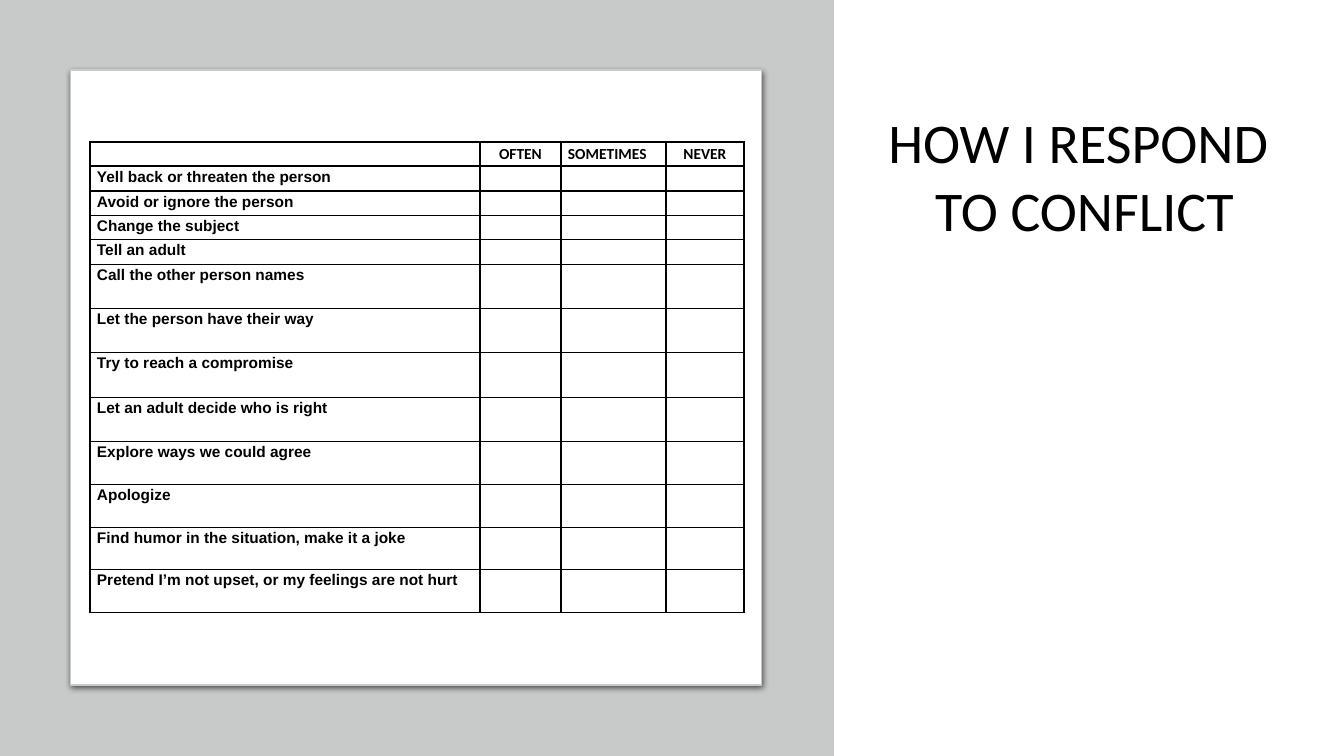
import itertools

import pptx
import pptx.dml.color
import pptx.enum.shapes
import pptx.enum.text
import pptx.oxml
import pptx.oxml.ns
import pptx.util
from lxml import etree

TITLE = ["HOW I RESPOND ", "TO CONFLICT"]
FREQUENCIES = ["OFTEN", "SOMETIMES", "NEVER"]
RESPONSES = [
    "Yell back or threaten the person",
    "Avoid or ignore the person",
    "Change the subject",
    "Tell an adult",
    "Call the other person names",
    "Let the person have their way",
    "Try to reach a compromise",
    "Let an adult decide who is right",
    "Explore ways we could agree",
    "Apologize",
    "Find humor in the situation, make it a joke",
    "Pretend I’m not upset, or my feelings are not hurt",
]
COLORS = {"backdrop": "C8CACA", "card": "FFFFFF", "ink": "000000"}

SLIDE = (1344, 756)
BACKDROP = (0, 0, 834, 756)
CARD = (71, 70, 691, 615)
TITLE_BOX = (876, 103, 417, 146)
COLUMN_EDGES = [90, 480, 561, 666, 744]
ROW_EDGES = [142, 166, 191, 216, 240, 265, 309, 353, 398, 442, 485, 528, 570, 613]
CELL_FORMAT = {"margin_left": 7, "margin_top": 1, "margin_right": 7, "margin_bottom": 0}
CELL_PT = 11
CENTER = pptx.enum.text.PP_ALIGN.CENTER
LEFT = pptx.enum.text.PP_ALIGN.LEFT
SHADOW = (
    f'<a:effectLst {pptx.oxml.ns.nsdecls("a")}>'
    '<a:outerShdw blurRad="57150" dist="19050" dir="5400000" algn="ctr" rotWithShape="0">'
    f'<a:srgbClr val="{COLORS["ink"]}"><a:alpha val="63000"/></a:srgbClr>'
    "</a:outerShdw></a:effectLst>"
)


def px(length):
    return pptx.util.Emu(round(length * 914400 / 100.8))


def rgb(name):
    return pptx.dml.color.RGBColor.from_string(COLORS[name])


def add_panel(slide, kind, place, color):
    panel = slide.shapes.add_shape(kind, *map(px, place))
    panel.shadow.inherit = False
    panel.fill.solid()
    panel.fill.fore_color.rgb = rgb(color)
    panel.line.fill.background()
    return panel


def write(paragraph, text, **formats):
    run = paragraph.add_run()
    run.text = text
    run.font.color.rgb = rgb("ink")
    for key, value in formats.items():
        setattr(run.font, key, value)


def add_borders(cell):
    properties = cell._tc.get_or_add_tcPr()
    for side in "LRTB":
        properties.append(pptx.oxml.parse_xml(
            f'<a:ln{side} {pptx.oxml.ns.nsdecls("a")} w="12700"><a:solidFill>'
            f'<a:srgbClr val="{COLORS["ink"]}"/></a:solidFill></a:ln{side}>'
        ))


def fill_cell(cell, text, font_name, alignment):
    add_borders(cell)
    cell.fill.background()
    for key, length in CELL_FORMAT.items():
        setattr(cell, key, px(length))
    paragraph = cell.text_frame.paragraphs[0]
    paragraph.alignment = alignment
    paragraph.line_spacing = 1.07
    if text:
        write(paragraph, text, name=font_name, size=pptx.util.Pt(CELL_PT), bold=True)
    else:
        # An empty cell needs a small end mark, or its row grows.
        etree.SubElement(paragraph._p, pptx.oxml.ns.qn("a:endParaRPr"), sz=str(CELL_PT * 100))


def add_survey(slide):
    rows = [["", *FREQUENCIES]] + [[response, "", "", ""] for response in RESPONSES]
    place = (COLUMN_EDGES[0], ROW_EDGES[0],
             COLUMN_EDGES[-1] - COLUMN_EDGES[0], ROW_EDGES[-1] - ROW_EDGES[0])
    survey = slide.shapes.add_table(len(rows), len(rows[0]), *map(px, place)).table
    survey.first_row = survey.horz_banding = False
    for column, (start, end) in zip(survey.columns, itertools.pairwise(COLUMN_EDGES)):
        column.width = px(end - start)
    for row, (start, end) in zip(survey.rows, itertools.pairwise(ROW_EDGES)):
        row.height = px(end - start)
    for r, texts in enumerate(rows):
        for c, text in enumerate(texts):
            font_name = "Arial" if c == 0 else "Calibri"
            alignment = CENTER if text in ("OFTEN", "NEVER") else LEFT
            fill_cell(survey.cell(r, c), text, font_name, alignment)


def add_title(slide):
    frame = slide.shapes.add_textbox(*map(px, TITLE_BOX)).text_frame
    frame.word_wrap = False
    frame.auto_size = pptx.enum.text.MSO_AUTO_SIZE.SHAPE_TO_FIT_TEXT
    for i, line in enumerate(TITLE):
        paragraph = frame.add_paragraph() if i else frame.paragraphs[0]
        paragraph.alignment = CENTER
        write(paragraph, line, name="Calibri", size=pptx.util.Pt(40))


def main():
    deck = pptx.Presentation()
    deck.slide_width, deck.slide_height = map(px, SLIDE)
    slide = deck.slides.add_slide(deck.slide_layouts[6])
    shapes = pptx.enum.shapes.MSO_SHAPE
    add_panel(slide, shapes.RECTANGLE, BACKDROP, "backdrop")
    card = add_panel(slide, shapes.ROUNDED_RECTANGLE, CARD, "card")
    card.adjustments[0] = 0
    card.line.color.rgb = rgb("backdrop")
    card.line.width = pptx.util.Pt(0.75)
    effects = card._element.spPr.find(pptx.oxml.ns.qn("a:effectLst"))
    effects.getparent().replace(effects, pptx.oxml.parse_xml(SHADOW))
    add_survey(slide)
    add_title(slide)
    deck.save("out.pptx")


if __name__ == "__main__":
    main()
